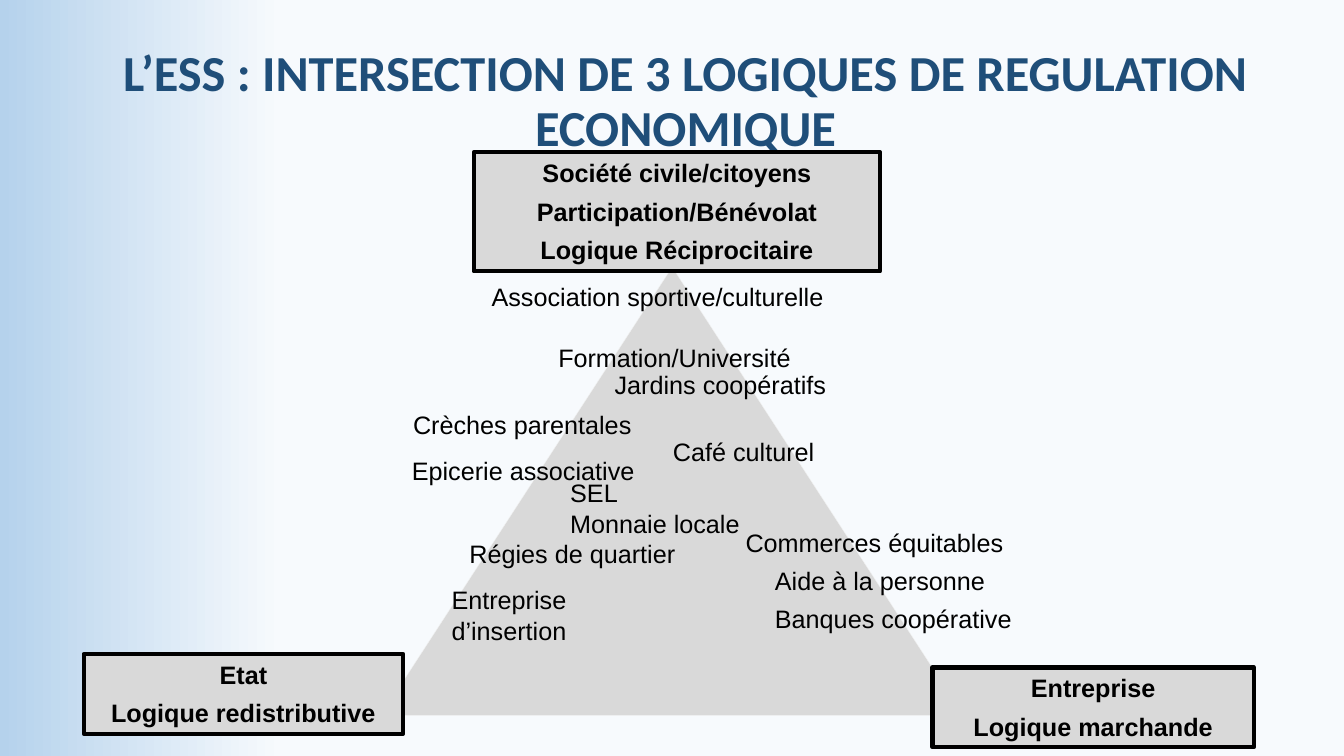
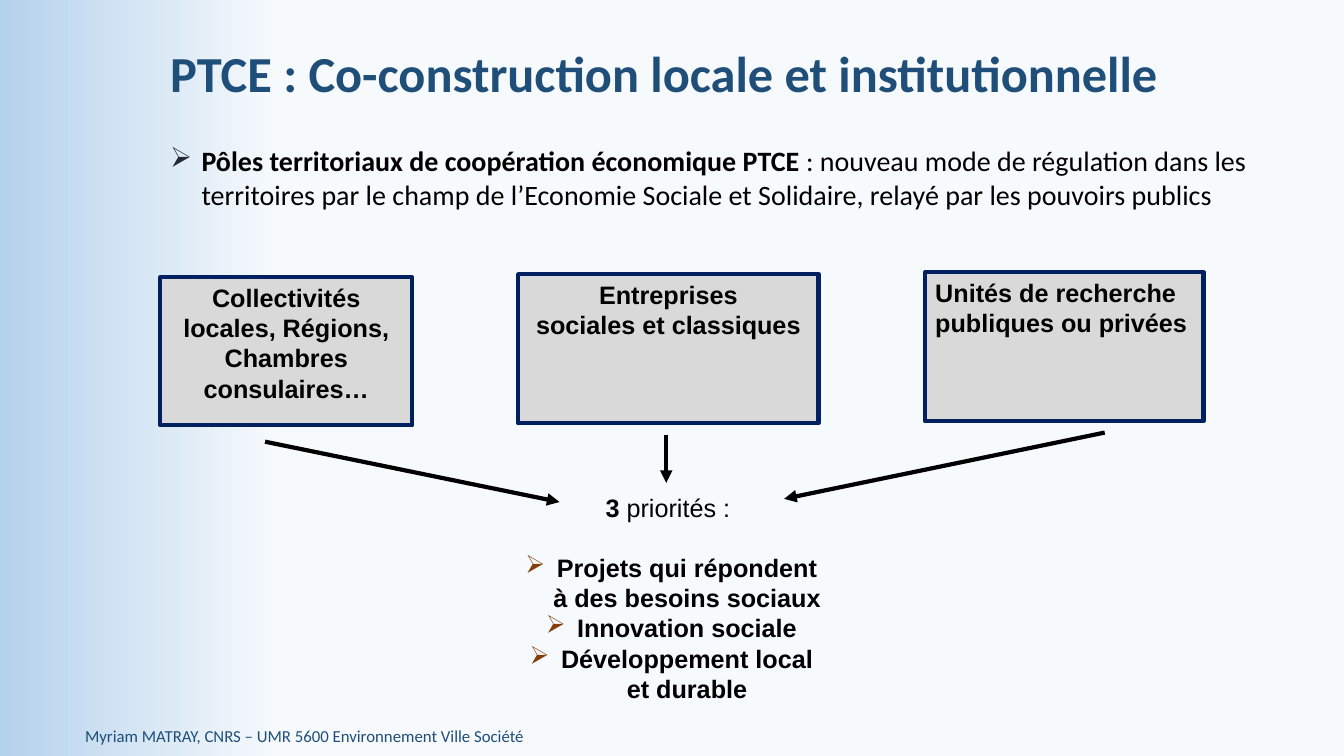
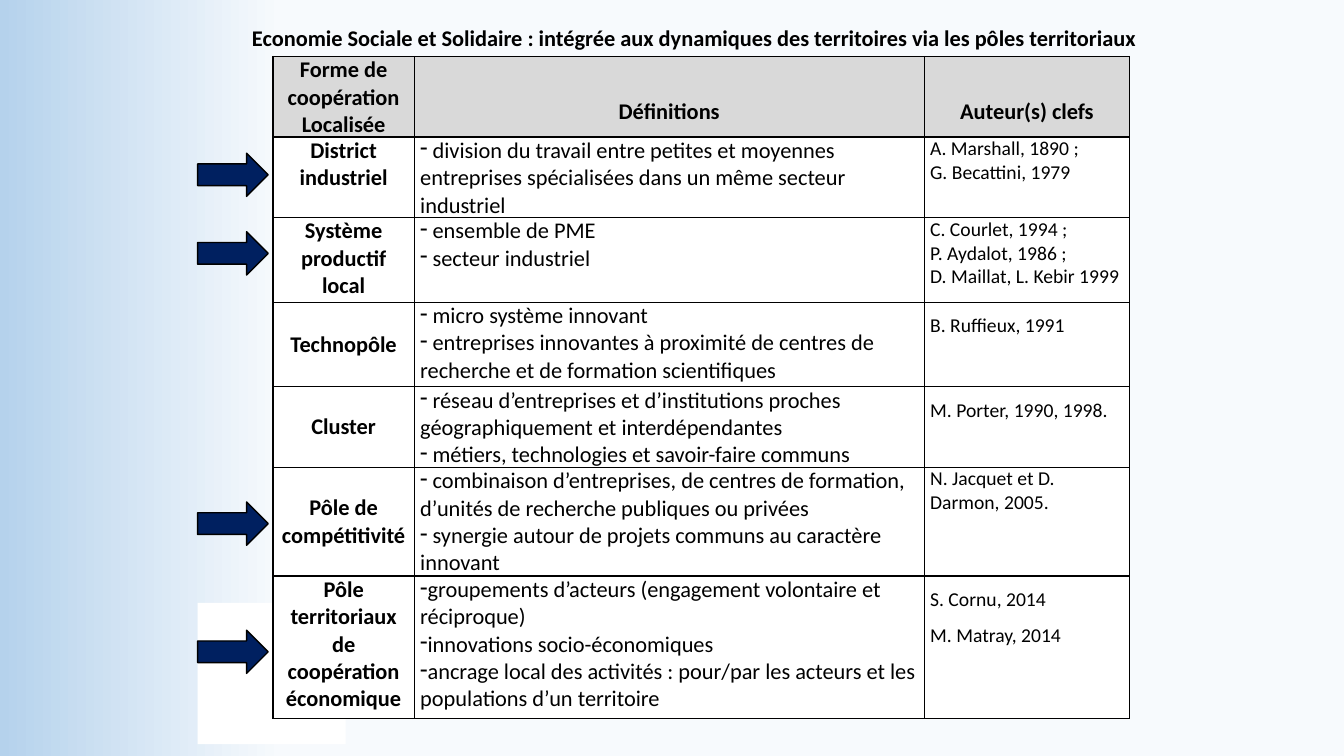
"""Build three slides on the social economy and territorial cooperation."""
from lxml import etree
from pptx import Presentation
from pptx.dml.color import RGBColor
from pptx.enum import shapes, text
from pptx.oxml import ns
from pptx.util import Cm, Pt

COLORS = {
    "background": "F7FAFD", "edge": "B5D2EC", "title": "1F4E79", "text": "000000",
    "gray": "D9D9D9", "triangle_line": "F2F2F2", "navy": "002060", "white": "FFFFFF",
    "bullet": "222A35", "priority_bullet": "843C0B",
}
LEFT, CENTER = text.PP_ALIGN.LEFT, text.PP_ALIGN.CENTER
TOP, MIDDLE, BOTTOM = text.MSO_ANCHOR.TOP, text.MSO_ANCHOR.MIDDLE, text.MSO_ANCHOR.BOTTOM
SHAPE = shapes.MSO_SHAPE

LOGICS_TITLE = "L’ESS : INTERSECTION DE 3 LOGIQUES DE REGULATION ECONOMIQUE"
TRIANGLE = (9.6, 6.73, 14.68, 11.3)
POLES = [
    ((2.11, 16.48, 8.05, 2.01), ["Etat", "Logique redistributive"]),
    ((11.94, 3.84, 10.24, 3),
     ["Société civile/citoyens", "Participation/Bénévolat", "Logique Réciprocitaire"]),
    ((23.5, 16.82, 8.1, 2.01), ["Entreprise", "Logique marchande"]),
]
LABEL_HEIGHT = 1.02
EXAMPLES = [
    (12.14, 6.96, 10.03, ["Association sportive/culturelle"]),
    (13.82, 8.51, 6.99, ["Formation/Université"]),
    (15.24, 9.17, 6.53, ["Jardins coopératifs"]),
    (10.16, 10.19, 6.45, ["Crèches parentales"]),
    (16.71, 10.87, 4.6, ["Café culturel"]),
    (10.13, 11.35, 6.96, ["Epicerie associative"]),
    (14.12, 11.91, 5.5, ["SEL", "Monnaie locale"]),
    (18.54, 13.16, 7.24, ["Commerces équitables"]),
    (11.58, 13.44, 5.72, ["Régies de quartier"]),
    (19.28, 14.12, 6.53, ["Aide à la personne"]),
    (11.13, 14.61, 4.24, ["Entreprise d’insertion"]),
    (19.28, 15.09, 7.49, ["Banques coopérative"]),
]

PTCE_TITLE = "PTCE : Co-construction locale et institutionnelle"
PTCE_DEFINITION = [
    ("Pôles territoriaux de coopération économique PTCE ", True),
    (": nouveau mode de régulation dans les territoires par le champ de l’Economie "
     "Sociale et Solidaire, relayé par les pouvoirs publics", False),
]
PARTNERS = [
    ((4.04, 6.99, 6.35, 3.73), CENTER,
     ["Collectivités locales, Régions, Chambres consulaires…"]),
    ((13.06, 6.91, 7.57, 3.76), CENTER, ["Entreprises", "sociales et classiques"]),
    ((23.32, 6.86, 7.01, 3.76), LEFT, ["Unités de recherche publiques ou privées"]),
]
PARTNER_ARROWS = [
    (6.68, 11.13, 14.1, 12.65),
    (16.79, 10.95, 16.79, 12.17),
    (27.84, 10.9, 19.76, 12.57),
]
PRIORITIES = [
    [("3", True), (" priorités : ", False)],
    "Projets qui répondent à des besoins sociaux",
    "Innovation sociale",
    "Développement local et durable",
]
FOOTER = "Myriam MATRAY, CNRS – UMR 5600 Environnement Ville Société"

FORMS_TITLE = ("Economie Sociale et Solidaire : intégrée aux dynamiques des territoires "
               "via les pôles territoriaux")
TABLE_ORIGIN = (6.88, 1.42)
COLUMN_WIDTHS = [3.56, 12.85, 5.18]
ROW_HEIGHTS = [1.91, 1.91, 2.13, 2.13, 2.03, 2.74, 3.58]
HEADERS = [["Forme de coopération", "Localisée"], ["Définitions"], ["Auteur(s) clefs"]]
FORMS = [
    (["District industriel"], TOP,
     [" division du travail entre petites et moyennes entreprises spécialisées dans "
      "un même secteur industriel"],
     ["A. Marshall, 1890 ;", "G. Becattini, 1979"], 1),
    (["Système productif local"], TOP,
     [" ensemble de PME", " secteur industriel"],
     ["C. Courlet, 1994 ;", "P. Aydalot, 1986 ;", "D. Maillat, L. Kebir 1999"], 1),
    (["Technopôle"], MIDDLE,
     [" micro système innovant",
      " entreprises innovantes à proximité de centres de recherche et de formation "
      "scientifiques"],
     ["B. Ruffieux, 1991"], 1.5),
    (["Cluster"], MIDDLE,
     [" réseau d’entreprises et d’institutions proches géographiquement et "
      "interdépendantes",
      " métiers, technologies et savoir-faire communs"],
     ["M. Porter, 1990, 1998."], 1.5),
    (["Pôle de", "compétitivité"], MIDDLE,
     [" combinaison d’entreprises, de centres de formation, d’unités de recherche "
      "publiques ou privées",
      " synergie autour de projets communs au caractère innovant"],
     ["N. Jacquet et D. Darmon, 2005."], 1),
    (["Pôle territoriaux de coopération économique"], TOP,
     ["groupements d’acteurs (engagement volontaire et réciproque)",
      "innovations socio-économiques",
      "ancrage local des activités : pour/par les acteurs et les populations d’un "
      "territoire"],
     ["S. Cornu, 2014", "M. Matray, 2014"], 1.5),
]
FORM_ARROW_TOPS = [3.86, 5.84, 12.65, 15.88]
WHITE_PATCH = (4.98, 15.19, 3.73, 3.56)


def rgb(name):
    return RGBColor.from_string(COLORS[name])


def add_xml(parent, tag, **attributes):
    return etree.SubElement(parent, ns.qn(tag), attributes)


def write(frame, lines, size, font="Arial", bold=False, color="text", align=LEFT,
          space=0, spacing=1):
    for index, line in enumerate(lines):
        paragraph = frame.paragraphs[0] if index == 0 else frame.add_paragraph()
        paragraph.alignment = align
        paragraph.line_spacing = spacing
        if index and space:
            paragraph.space_before = Pt(space)
        for words, heavy in ([(line, bold)] if isinstance(line, str) else line):
            run = paragraph.add_run()
            run.text = words
            run.font.name, run.font.size, run.font.bold = font, Pt(size), heavy
            run.font.color.rgb = rgb(color)


def add_bullets(paragraphs, character, color="text", indent=0):
    for paragraph in paragraphs:
        properties = paragraph._p.get_or_add_pPr()
        properties.set("marL", str(Cm(indent)))
        properties.set("indent", str(-Cm(indent)))
        add_xml(add_xml(properties, "a:buClr"), "a:srgbClr", val=COLORS[color])
        add_xml(properties, "a:buChar", char=character)


def add_text(slide, box, lines, size, anchor=TOP, **style):
    frame = slide.shapes.add_textbox(*map(Cm, box)).text_frame
    frame.word_wrap = True
    frame.vertical_anchor = anchor
    write(frame, lines, size, **style)
    return frame


def add_title(slide, box, title, align):
    add_text(slide, box, [title], 36, MIDDLE, font="Calibri", bold=True,
             color="title", align=align, spacing=0.9)


def add_figure(slide, kind, box, fill, line=None, width=1):
    shape = slide.shapes.add_shape(kind, *map(Cm, box))
    shape.shadow.inherit = False
    shape.fill.solid()
    shape.fill.fore_color.rgb = rgb(fill)
    if line:
        shape.line.color.rgb = rgb(line)
        shape.line.width = Pt(width)
    else:
        shape.line.fill.background()
    return shape


def add_box(slide, box, lines, line, anchor=TOP, **style):
    frame = add_figure(slide, SHAPE.RECTANGLE, box, "gray", line, 3).text_frame
    frame.word_wrap = True
    frame.vertical_anchor = anchor
    write(frame, lines, 18, bold=True, **style)


def add_arrow(slide, ends):
    connector = slide.shapes.add_connector(shapes.MSO_CONNECTOR.STRAIGHT, *map(Cm, ends))
    connector.line.color.rgb = rgb("text")
    connector.line.width = Pt(3)
    properties = connector.element.spPr
    add_xml(properties.find(ns.qn("a:ln")), "a:tailEnd", type="triangle")
    add_xml(properties, "a:effectLst")


def fill_cell(cell, lines, size, fill="white", anchor=TOP, **style):
    cell.margin_left = cell.margin_right = Cm(0.15)
    cell.margin_top = cell.margin_bottom = 0
    cell.vertical_anchor = anchor
    properties = cell._tc.get_or_add_tcPr()
    for side in "LRTB":
        border = add_xml(properties, f"a:ln{side}", w=str(Pt(1)))
        add_xml(add_xml(border, "a:solidFill"), "a:srgbClr", val=COLORS["text"])
    cell.fill.solid()
    cell.fill.fore_color.rgb = rgb(fill)
    write(cell.text_frame, lines, size, font="Calibri", **style)


def build_logics(slide):
    add_title(slide, (2.46, 1, 29.64, 3.18), LOGICS_TITLE, CENTER)
    add_figure(slide, SHAPE.ISOSCELES_TRIANGLE, TRIANGLE, "gray", "triangle_line", 0.25)
    for box, lines in POLES:
        add_box(slide, box, lines, "text", align=CENTER, space=6)
    for left, top, width, lines in EXAMPLES:
        add_text(slide, (left, top, width, LABEL_HEIGHT * len(lines)), lines, 18)


def build_ptce(slide):
    add_title(slide, (4.04, 0.33, 28.78, 3.18), PTCE_TITLE, LEFT)
    definition = add_text(slide, (4.04, 3.5, 29.18, 2), [PTCE_DEFINITION], 20,
                          font="Calibri")
    add_bullets(definition.paragraphs, "➢", "bullet", 0.79)
    for box, align, lines in PARTNERS:
        add_box(slide, box, lines, "navy", align=align)
    priorities = add_text(slide, (12.73, 12.29, 8.38, 5.9), PRIORITIES, 18,
                          bold=True, align=CENTER)
    add_bullets(priorities.paragraphs[1:], "➢", "priority_bullet", 0.79)
    priorities.paragraphs[1].space_before = Pt(21)
    for ends in PARTNER_ARROWS:
        add_arrow(slide, ends)
    add_text(slide, (1.42, 18.03, 12.52, 1.02), [FOOTER], 12, MIDDLE,
             font="Calibri", color="title", align=CENTER)


def build_forms(slide):
    add_text(slide, (6.1, 0.48, 23.19, 0.94), [FORMS_TITLE], 16, font="Calibri", bold=True)
    add_figure(slide, SHAPE.RECTANGLE, WHITE_PATCH, "white")
    for top in FORM_ARROW_TOPS:
        add_figure(slide, SHAPE.RIGHT_ARROW, (4.98, top, 1.78, 1.09), "navy", "text")
    size = (sum(COLUMN_WIDTHS), sum(ROW_HEIGHTS))
    table = slide.shapes.add_table(len(ROW_HEIGHTS), len(COLUMN_WIDTHS),
                                   *map(Cm, TABLE_ORIGIN + size)).table
    table.first_row = table.horz_banding = False
    for column, width in zip(table.columns, COLUMN_WIDTHS):
        column.width = Cm(width)
    for row, height in zip(table.rows, ROW_HEIGHTS):
        row.height = Cm(height)
    for index, lines in enumerate(HEADERS):
        cell = table.cell(0, index)
        fill_cell(cell, lines, 16, "gray", BOTTOM, bold=True, align=CENTER)
        if index:
            cell.margin_bottom = Cm(0.3)
    for row, (name, anchor, definitions, authors, spacing) in enumerate(FORMS, 1):
        fill_cell(table.cell(row, 0), name, 16, anchor=anchor, bold=True, align=CENTER)
        fill_cell(table.cell(row, 1), definitions, 16)
        add_bullets(table.cell(row, 1).text_frame.paragraphs, "-")
        fill_cell(table.cell(row, 2), authors, 14, spacing=spacing)


def main():
    presentation = Presentation()
    presentation.slide_width, presentation.slide_height = Cm(33.87), Cm(19.05)
    background = presentation.slide_master.background.fill
    background.gradient()
    background.gradient_angle = 180
    for stop, position, color in zip(background.gradient_stops, (0.79, 1),
                                     ("background", "edge")):
        stop.position = position
        stop.color.rgb = rgb(color)
    for build in (build_logics, build_ptce, build_forms):
        build(presentation.slides.add_slide(presentation.slide_layouts[6]))
    presentation.save("out.pptx")


if __name__ == "__main__":
    main()
